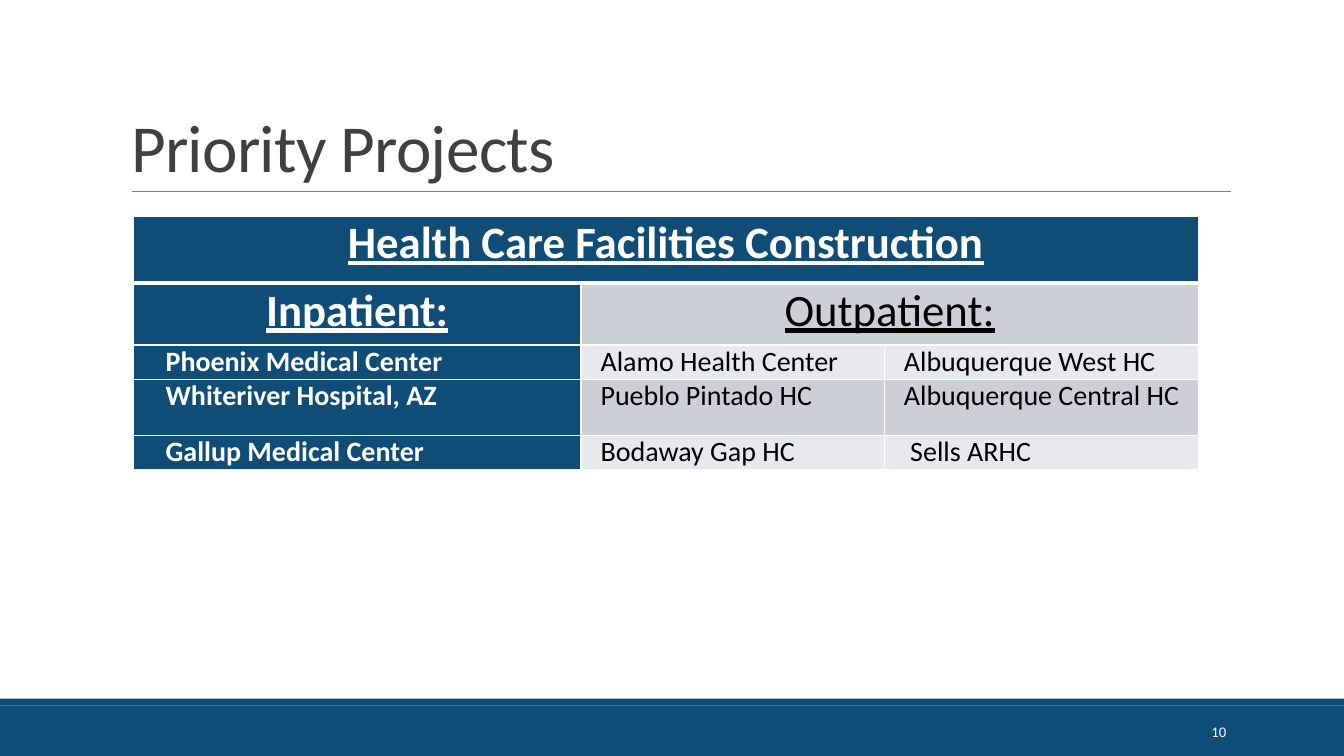
from pptx import Presentation
from pptx.dml.color import RGBColor
from pptx.enum import shapes, text
from pptx.oxml import ns
from pptx.util import Pt
from lxml import etree

NAVY, WHITE, BLACK = "0F4C76", "FFFFFF", "000000"
BAND_DARK, BAND_LIGHT = "CCD0D6", "E7E9EC"
LEFT, CENTER, RIGHT = text.PP_ALIGN.LEFT, text.PP_ALIGN.CENTER, text.PP_ALIGN.RIGHT


def rgb(color):
    return RGBColor.from_string(color)


class Deck:
    def __init__(self, width, height, font):
        self.prs = Presentation()
        self.prs.slide_width, self.prs.slide_height = Pt(width), Pt(height)
        self.font = font
        self.s = self.prs.slides.add_slide(self.prs.slide_layouts[5])

    def set_text(self, tf, words, size, color, align=LEFT, bold=False, underline=False):
        tf.text = words
        p = tf.paragraphs[0]
        p.alignment = align
        r = p.runs[0]
        f = r.font
        f.name, f.size, f.bold, f.underline = self.font, Pt(size), bold, underline
        f.color.rgb = rgb(color)
        return p

    def title(self, words, x, y, w, h):
        sp = self.s.shapes.title
        sp.left, sp.top, sp.width, sp.height = Pt(x), Pt(y), Pt(w), Pt(h)
        tf = sp.text_frame
        tf.auto_size = text.MSO_AUTO_SIZE.NONE
        tf.vertical_anchor = text.MSO_ANCHOR.BOTTOM
        p = self.set_text(tf, words, 48, "404040")
        p.line_spacing = 0.85
        p.runs[0].font._element.set("spc", "-50")

    def bar(self, x, y, w, h, color):
        sp = self.s.shapes.add_shape(shapes.MSO_SHAPE.RECTANGLE, Pt(x), Pt(y), Pt(w), Pt(h))
        sp.shadow.inherit = False
        sp.fill.solid()
        sp.fill.fore_color.rgb = rgb(color)
        sp.line.fill.background()

    def rule(self, x1, x2, y, color, weight):
        line = self.s.shapes.add_connector(
            shapes.MSO_CONNECTOR.STRAIGHT, Pt(x1), Pt(y), Pt(x2), Pt(y))
        line.line.color.rgb = rgb(color)
        line.line.width = Pt(weight)
        etree.SubElement(line._element.spPr, ns.qn("a:effectLst"))

    def label(self, words, x, y, w, h, size, color, align):
        tf = self.s.shapes.add_textbox(Pt(x), Pt(y), Pt(w), Pt(h)).text_frame
        tf.word_wrap = True
        tf.vertical_anchor = text.MSO_ANCHOR.MIDDLE
        self.set_text(tf, words, size, color, align)

    def table(self, x, y, widths, heights):
        shape = self.s.shapes.add_table(
            len(heights), len(widths), Pt(x), Pt(y), Pt(sum(widths)), Pt(sum(heights)))
        table = shape.table
        table.first_row = table.horz_banding = False
        for column, width in zip(table.columns, widths):
            column.width = Pt(width)
        for row, height in zip(table.rows, heights):
            row.height = Pt(height)
        return table

    def cell(self, cell, fill, top=1, bottom=1, indent=5):
        """Set borders, fill and margins of one cell."""
        tcPr = cell._tc.get_or_add_tcPr()
        for side, weight in zip("LRTB", (1, 1, top, bottom)):
            ln = etree.SubElement(tcPr, ns.qn(f"a:ln{side}"), w=str(Pt(weight)))
            paint = etree.SubElement(ln, ns.qn("a:solidFill"))
            etree.SubElement(paint, ns.qn("a:srgbClr"), val=WHITE)
        cell.fill.solid()
        cell.fill.fore_color.rgb = rgb(fill)
        cell.margin_left, cell.margin_right = Pt(indent), Pt(5)
        cell.margin_top = cell.margin_bottom = 0


def main():
    deck = Deck(960, 540, "Calibri")
    deck.bar(0, 504, 960, 36, NAVY)
    deck.bar(0, 499, 960, 5, NAVY)
    deck.rule(94, 879, 136.8, "808080", 0.5)
    deck.title("Priority Projects", 86.4, 22.5, 792, 114.3)

    projects = [
        ("Phoenix Medical Center", "Alamo Health Center", "Albuquerque West HC"),
        ("Whiteriver Hospital, AZ", "Pueblo Pintado HC", "Albuquerque Central HC"),
        ("Gallup Medical Center", "Bodaway Gap HC", "Sells ARHC"),
    ]
    table = deck.table(95.3, 154.4, [319.7, 216.7, 224.4], [48, 44, 20, 40, 20])

    for c in range(3):
        deck.cell(table.cell(0, c), NAVY, bottom=3)
        deck.cell(table.cell(1, c), BAND_DARK if c else NAVY, top=3)
    table.cell(0, 0).merge(table.cell(0, 2))
    table.cell(1, 1).merge(table.cell(1, 2))
    headings = [
        (0, 0, "Health Care Facilities Construction", WHITE, True),
        (1, 0, "Inpatient:", WHITE, True),
        (1, 1, "Outpatient:", BLACK, False),
    ]
    for r, c, words, color, bold in headings:
        deck.set_text(table.cell(r, c).text_frame, words, 32, color, CENTER, bold, True)

    for r, names in enumerate(projects, 2):
        for c, name in enumerate(names):
            cell = table.cell(r, c)
            band = BAND_DARK if r % 2 else BAND_LIGHT
            indent = 23 if c == 0 else 18.5 if name == "Sells ARHC" else 14
            deck.cell(cell, band if c else NAVY, indent=indent)
            deck.set_text(cell.text_frame, name, 20, BLACK if c else WHITE, bold=c == 0)

    deck.label("10", 780, 508.5, 103, 28.8, 10.5, WHITE, RIGHT)
    deck.prs.save("out.pptx")


if __name__ == "__main__":
    main()
